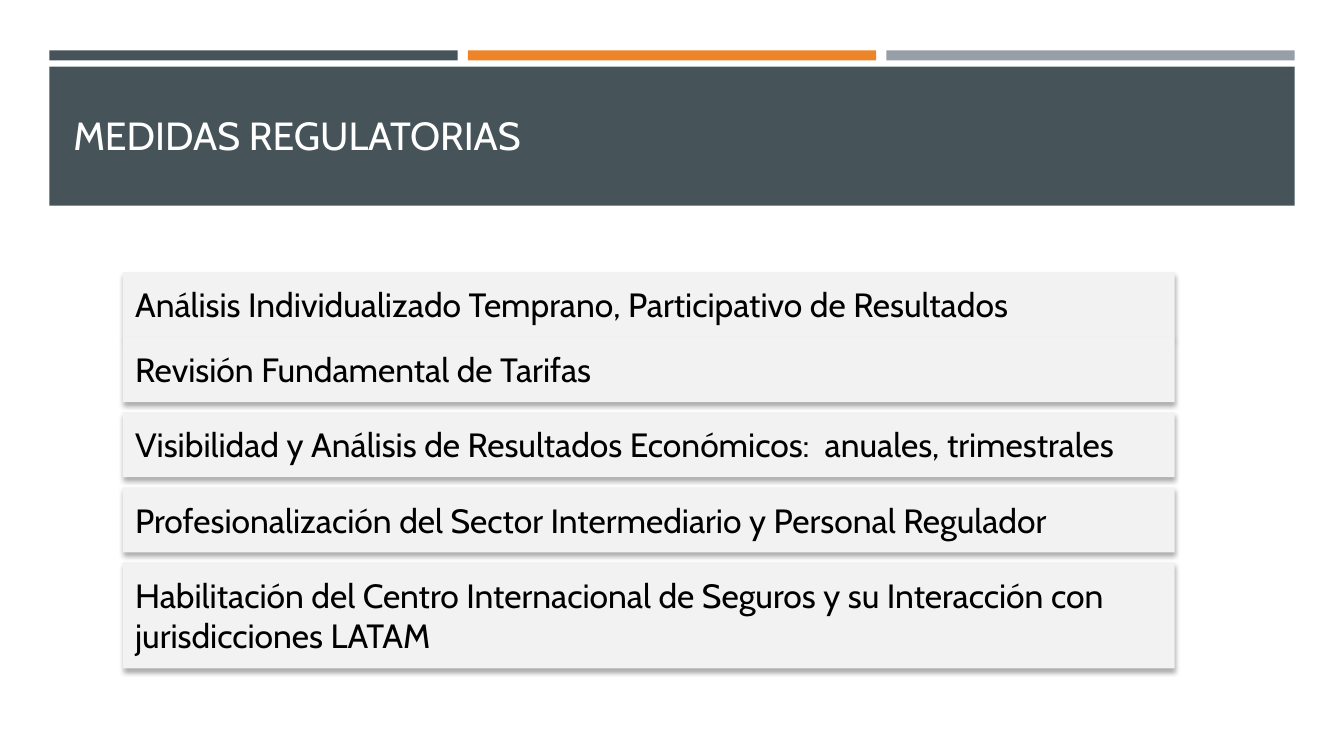
from lxml import etree
from pptx import Presentation, util as u
from pptx.dml.color import RGBColor
from pptx.enum import shapes, text
from pptx.oxml.ns import qn

SLATE = RGBColor(0x46, 0x53, 0x59)
ORANGE = RGBColor(0xED, 0x84, 0x28)
GRAY = RGBColor(0x96, 0x9F, 0xA7)
PALE = RGBColor(0xF2, 0xF2, 0xF2)
BLACK = RGBColor(0, 0, 0)
WHITE = RGBColor(255, 255, 255)
FONT = "Cabin"

# Header grid: three columns with equal gaps
LEFT, COL, GAP = 0.49, 4.05, 0.1
# List: row height depends on the number of text lines
LIST_X, LIST_Y, LIST_W = 1.22, 2.7, 10.43
PAD, LINE = 0.12, 0.405

# Text, lines, gap below
ROWS = [
    ("Análisis Individualizado Temprano, Participativo de Resultados", 1, 0),
    ("Revisión Fundamental de Tarifas", 1, GAP),
    ("Visibilidad y Análisis de Resultados Económicos:  anuales, trimestrales", 1, GAP),
    ("Profesionalización del Sector Intermediario y Personal Regulador", 1, GAP),
    ("Habilitación del Centro Internacional de Seguros y su Interacción con "
     "jurisdicciones LATAM", 2, 0),
]


def add_bar(slide, x, y, w, h, color):
    bar = slide.shapes.add_shape(shapes.MSO_SHAPE.RECTANGLE,
                                 *map(u.Inches, (x, y, w, h)))
    bar.shadow.inherit = False
    bar.fill.solid()
    bar.fill.fore_color.rgb = color
    bar.line.fill.background()
    return bar


def add_shade(shape):
    """Soft shadow straight below the shape."""
    effects = shape._element.spPr.find(qn("a:effectLst"))
    shade = etree.SubElement(effects, qn("a:outerShdw"), blurRad=str(u.Pt(3.5)),
                             dist=str(u.Pt(2.2)), dir="5400000", rotWithShape="0")
    color = etree.SubElement(shade, qn("a:srgbClr"), val=str(BLACK))
    etree.SubElement(color, qn("a:alpha"), val="32000")


def set_text(shape, words, size, color, anchor):
    frame = shape.text_frame
    frame.word_wrap = True
    frame.vertical_anchor = anchor
    para = frame.paragraphs[0]
    para.text = words
    para.alignment = text.PP_ALIGN.LEFT
    para.font.name = FONT
    para.font.size = u.Pt(size)
    para.font.color.rgb = color
    return frame


def add_row(slide, y, words, lines):
    high = 2 * PAD + lines * LINE
    row = add_bar(slide, LIST_X, y, LIST_W, high, PALE)
    add_shade(row)
    frame = set_text(row, words, 24, BLACK, text.MSO_ANCHOR.TOP)
    frame.margin_left = frame.margin_right = u.Inches(PAD)
    frame.margin_top = frame.margin_bottom = u.Inches(PAD)
    return y + high


def main():
    deck = Presentation()
    deck.slide_width, deck.slide_height = u.Inches(13.33), u.Inches(7.5)
    slide = deck.slides.add_slide(deck.slide_layouts[6])

    # Header strips and band
    for i, color in enumerate((SLATE, ORANGE, GRAY)):
        add_bar(slide, LEFT + i * (COL + GAP), 0.5, COL, 0.1, color)
    add_bar(slide, LEFT, 0.66, 3 * COL + 2 * GAP, 1.38, SLATE)

    # Title
    title = slide.shapes.add_textbox(*map(u.Inches, (0.63, 0.8, 12.06, 0.82)))
    set_text(title, "MEDIDAS REGULATORIAS", 28, WHITE, text.MSO_ANCHOR.BOTTOM)

    # List of measures
    y = LIST_Y
    for words, lines, gap in ROWS:
        y = add_row(slide, y, words, lines) + gap

    deck.save("out.pptx")


if __name__ == "__main__":
    main()
